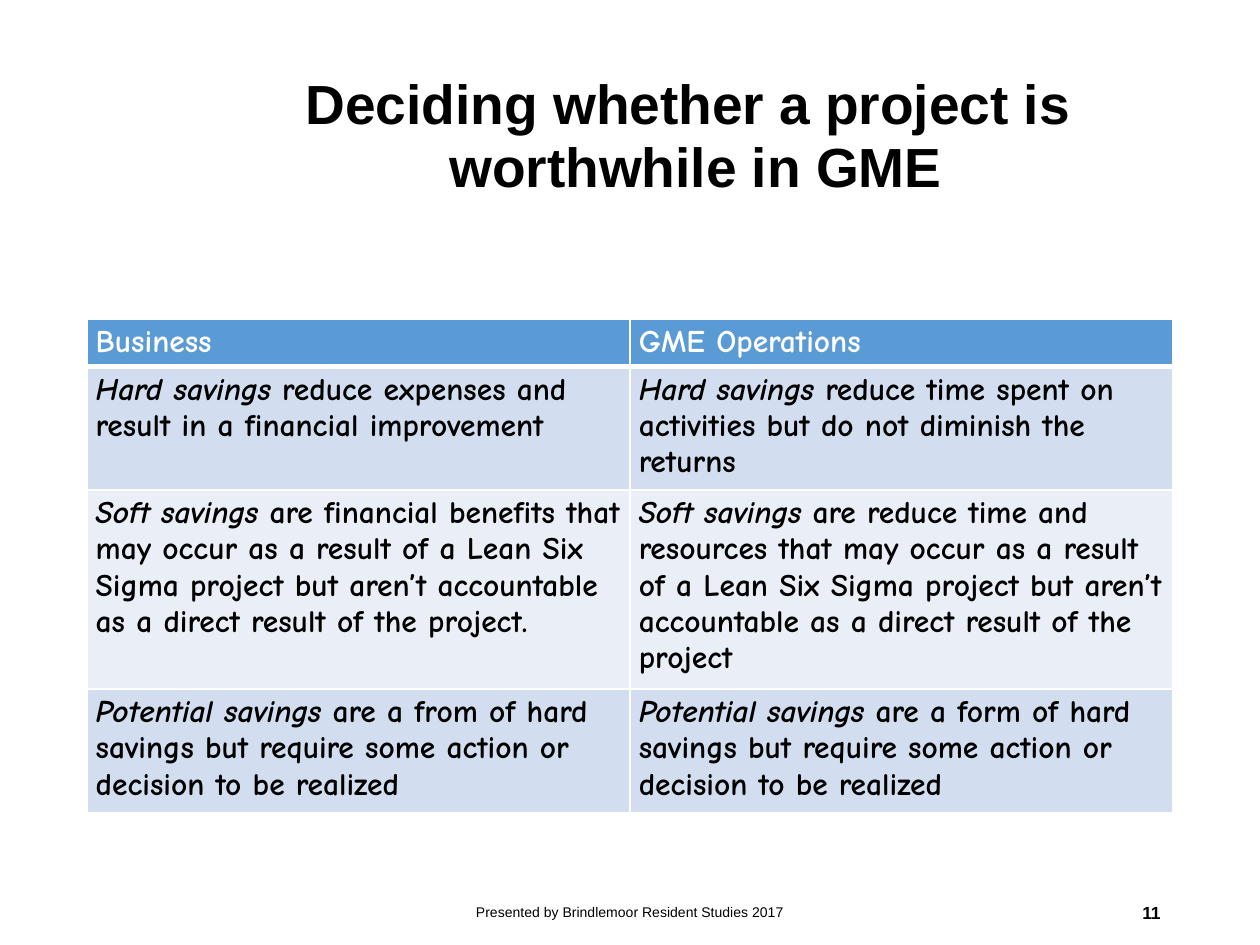
import pptx
import pptx.dml.color
import pptx.enum.text
import pptx.oxml
import pptx.oxml.ns
import pptx.util
from pptx.util import Inches

BLACK, WHITE = "000000", "FFFFFF"
HEADER_FILL, BAND_FILLS = "5B9BD5", ("D2DEEF", "EAEFF7")
ALIGN = pptx.enum.text.PP_ALIGN
HEADINGS = ("Business", "GME Operations")
SAVINGS = (
    ("Hard savings ",
     "reduce expenses and result in a financial improvement",
     "reduce time spent on activities but do not diminish the returns"),
    ("Soft savings ",
     "are financial benefits that may occur as a result of a Lean Six Sigma project "
     "but aren’t accountable as a direct result of the project.",
     "are reduce time and resources that may occur as a result of a Lean Six Sigma project "
     "but aren’t accountable as a direct result of the project"),
    ("Potential savings ",
     "are a from of hard savings but require some action or decision to be realized",
     "are a form of hard savings but require some action or decision to be realized"),
)


def color(value):
    """Turn a hex string into a colour."""
    return pptx.dml.color.RGBColor.from_string(value)


def set_font(font, name, size, value, bold):
    """Set the face, size, colour and weight of a font."""
    font.name, font.size, font.bold = name, pptx.util.Pt(size), bold
    font.color.rgb = color(value)


def add_text(slide, box, text, size, alignment, bold=False, spacing=None):
    """Place one vertically centred paragraph in the given box."""
    frame = slide.shapes.add_textbox(*map(Inches, box)).text_frame
    frame.word_wrap = True
    frame.vertical_anchor = pptx.enum.text.MSO_ANCHOR.MIDDLE
    paragraph = frame.paragraphs[0]
    paragraph.text = text
    paragraph.alignment = alignment
    paragraph.line_spacing = spacing
    set_font(paragraph.font, "Arial", size, BLACK, bold)


def set_borders(cell, bottom_width):
    """Draw white borders around a cell, the bottom one at its own width."""
    properties = cell._tc.get_or_add_tcPr()
    widths = (("lnL", 1), ("lnR", 1), ("lnT", 1), ("lnB", bottom_width))
    for index, (tag, width) in enumerate(widths):
        line = pptx.oxml.parse_xml(
            f'<a:{tag} {pptx.oxml.ns.nsdecls("a")} w="{pptx.util.Pt(width)}">'
            f'<a:solidFill><a:srgbClr val="{WHITE}"/></a:solidFill></a:{tag}>')
        properties.insert(index, line)


def fill_cell(cell, lead, text, fill, text_color, bottom_width=1):
    """Write an italic lead and its text into a filled, bordered cell."""
    cell.margin_left = cell.margin_right = Inches(0.07)
    cell.margin_top = cell.margin_bottom = Inches(0.04)
    cell.fill.solid()
    cell.fill.fore_color.rgb = color(fill)
    paragraph = cell.text_frame.paragraphs[0]
    if lead:
        run = paragraph.add_run()
        run.text, run.font.italic = lead, True
    paragraph.add_run().text = text
    set_font(paragraph.font, "Comic Neue", 18, text_color, True)
    set_borders(cell, bottom_width)


def add_savings_table(slide, box, row_heights):
    """Build the comparison of savings in business and in GME."""
    table = slide.shapes.add_table(
        len(row_heights), len(HEADINGS), *map(Inches, box)).table
    for column in table.columns:
        column.width = Inches(box[2] / len(HEADINGS))
    for row, height in zip(table.rows, row_heights):
        row.height = Inches(height)
    for column, heading in enumerate(HEADINGS):
        fill_cell(table.cell(0, column), "", heading, HEADER_FILL, WHITE, 3)
    for row, (lead, *texts) in enumerate(SAVINGS, 1):
        for column, text in enumerate(texts):
            fill_cell(table.cell(row, column), lead, text,
                      BAND_FILLS[(row - 1) % 2], BLACK)


def add_footer(slide, top, height):
    """Place the presenter line and the slide number."""
    add_text(slide, (3.31, top, 3.38, height),
             "Presented by Brindlemoor Resident Studies 2017", 8, ALIGN.CENTER)
    add_text(slide, (7.06, top, 2.25, height), "11", 10, ALIGN.RIGHT, bold=True)


def main():
    """Build and save the slide."""
    presentation = pptx.Presentation()
    presentation.slide_width, presentation.slide_height = Inches(10), Inches(7.5)
    slide = presentation.slides.add_slide(presentation.slide_layouts[6])
    add_text(slide, (1.21, 0.54, 8.62, 1.09),
             "Deciding whether a project is \vworthwhile in GME",
             31.5, ALIGN.CENTER, bold=True, spacing=0.95)
    add_savings_table(slide, (0.69, 2.53, 8.62, 3.89), (0.37, 0.97, 1.57, 0.97))
    add_footer(slide, 7.04, 0.4)
    presentation.save("out.pptx")


if __name__ == "__main__":
    main()
